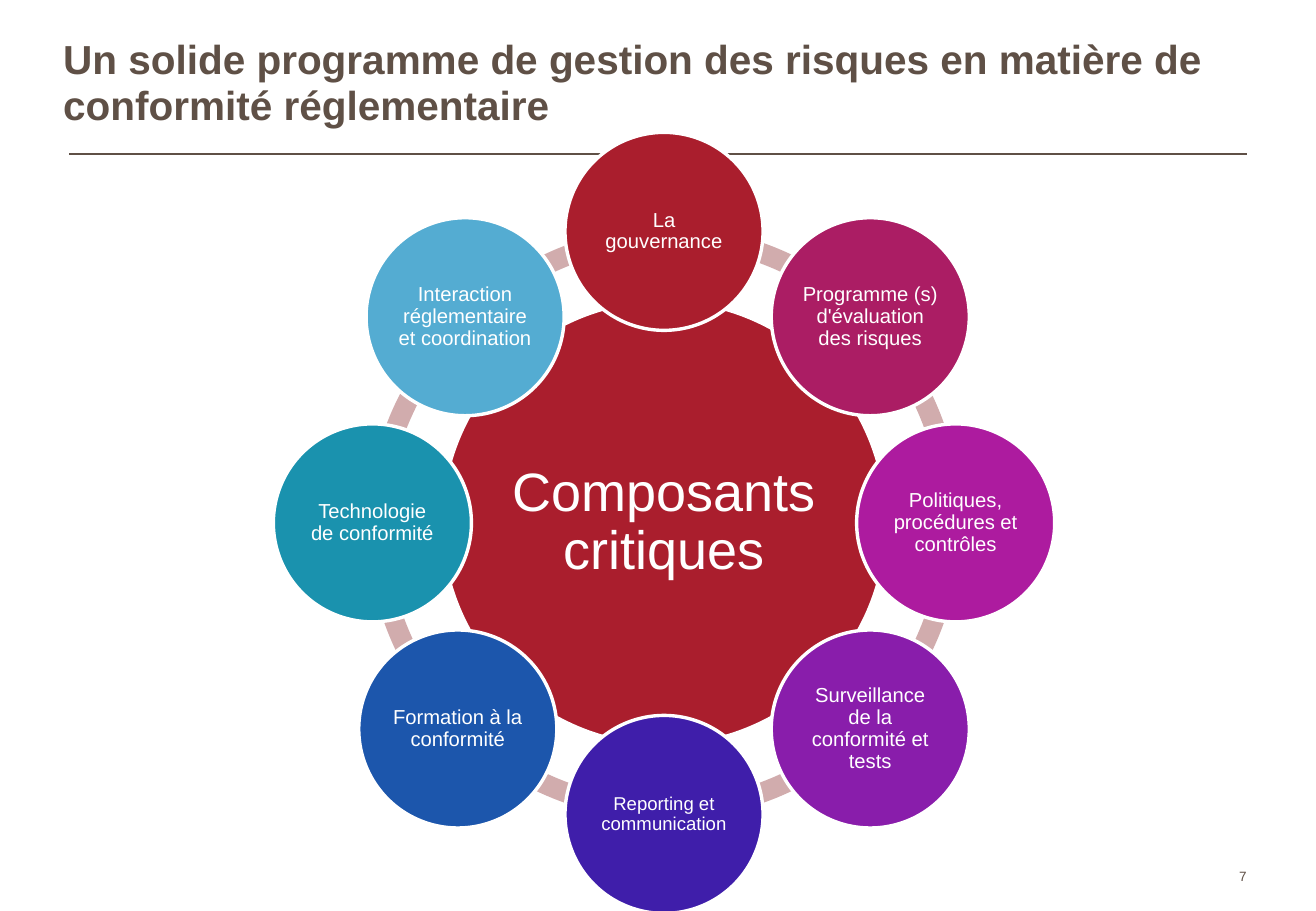
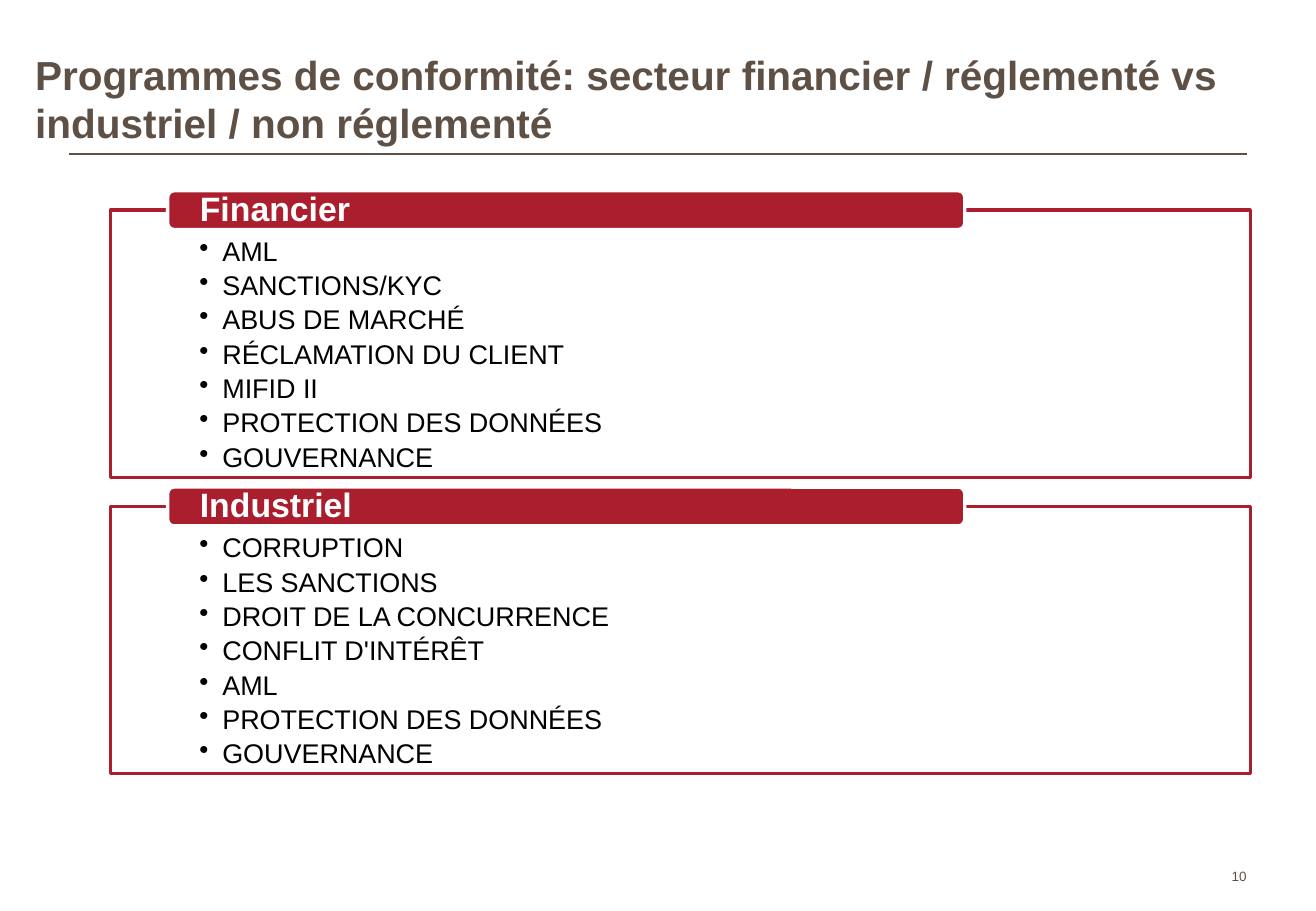
import math

import pptx
import pptx.dml.color
import pptx.enum.shapes
import pptx.enum.text
import pptx.oxml
import pptx.oxml.ns
import pptx.util
from lxml import etree

Inches = pptx.util.Inches
Pt = pptx.util.Pt
SHAPES = pptx.enum.shapes.MSO_SHAPE
ALIGN = pptx.enum.text.PP_ALIGN
ANCHOR = pptx.enum.text.MSO_ANCHOR

FONT = "Arial"
BROWN = "5F5046"
RED = "AA1E2D"
WHITE = "FFFFFF"
BLACK = "000000"
PALE_RED = "D1ACAD"

CENTER_X, CENTER_Y = 5.465, 4.305
ORBIT, NODE_SIZE, HUB_SIZE, RING_SIZE = 2.4, 1.63, 3.66, 4.89
ARC_STEP, ARC_TOP, FULL_TURN, RING_THICKNESS = 27, 162, 216, 0.034

NODES = [
    ("La gouvernance", RED, 12, 0),
    ("Programme (s) d'évaluation des risques", "AB1D64", 12, 0),
    ("Politiques, procédures et contrôles", "AD1B9F", 12, 0),
    ("Surveillance de la conformité et tests", "891DAB", 12, 0),
    ("Reporting et communication", "3F1EAA", 11, 0),
    ("Formation à la conformité", "1C56AC", 12, 0),
    ("Technologie de conformité", "1A92AE", 12, 0),
    ("Interaction réglementaire et coordination", "54ACD2", 12, 0.06),
]
SHIFTED_ARCS = {
    6: (0, 0.06, 108.82, 136.18),
    7: (0.06, 0, 134.99, 161.15),
}
SECTORS = [
    ("Financier", ["AML", "SANCTIONS/KYC", "ABUS DE MARCHÉ", "RÉCLAMATION DU CLIENT",
                   "MIFID II", "PROTECTION DES DONNÉES", "GOUVERNANCE"]),
    ("Industriel", ["CORRUPTION", "LES SANCTIONS", "DROIT DE LA CONCURRENCE",
                    "CONFLIT D'INTÉRÊT", "AML", "PROTECTION DES DONNÉES", "GOUVERNANCE"]),
]


def color(value):
    return pptx.dml.color.RGBColor.from_string(value)


def add_bullet(paragraph, indent):
    properties = paragraph._p.get_or_add_pPr()
    properties.set("marL", str(Inches(indent)))
    properties.set("indent", str(-Inches(indent)))
    bullet = etree.SubElement(properties, pptx.oxml.ns.qn("a:buChar"))
    bullet.set("char", "•")


def write_text(shape, lines, size=12, fill=WHITE, bold=False, align=ALIGN.LEFT,
               anchor=ANCHOR.MIDDLE, insets=(0, 0, 0, 0), spacing=0.9, after=0, bullet=None):
    frame = shape.text_frame
    frame.word_wrap = True
    frame.vertical_anchor = anchor
    frame.margin_left, frame.margin_top, frame.margin_right, frame.margin_bottom = map(Inches, insets)
    for index, line in enumerate(lines):
        paragraph = frame.add_paragraph() if index else frame.paragraphs[0]
        if bullet:
            add_bullet(paragraph, bullet)
        paragraph.alignment = align
        paragraph.line_spacing = spacing
        paragraph.space_after = Pt(after)
        run = paragraph.add_run()
        run.text = line
        run.font.name = FONT
        run.font.size = Pt(size)
        run.font.bold = bold
        run.font.color.rgb = color(fill)


def add_text(slide, box, text, **text_format):
    write_text(slide.shapes.add_textbox(*map(Inches, box)), [text], **text_format)


def add_shape(slide, kind, box, fill, line=None):
    shape = slide.shapes.add_shape(kind, *map(Inches, box))
    shape.shadow.inherit = False
    shape.fill.solid()
    shape.fill.fore_color.rgb = color(fill)
    if line:
        shape.line.color.rgb = color(line)
        shape.line.width = Pt(2)
    else:
        shape.line.fill.background()
    return shape


def add_circle(slide, x, y, diameter, fill, text, size, inset):
    box = (x - diameter / 2, y - diameter / 2, diameter, diameter)
    circle = add_shape(slide, SHAPES.OVAL, box, fill, WHITE)
    write_text(circle, [text], size=size, align=ALIGN.CENTER, insets=(inset,) * 4)


def add_base_slide(presentation, title, title_box, number, **title_format):
    slide = presentation.slides.add_slide(presentation.slide_layouts[6])
    rule = slide.shapes.add_connector(pptx.enum.shapes.MSO_CONNECTOR.STRAIGHT,
                                      *map(Inches, (0.57, 1.27, 10.26, 1.27)))
    rule.line.color.rgb = color(BROWN)
    rule.line.width = Pt(1)
    etree.SubElement(rule._element.spPr, pptx.oxml.ns.qn("a:effectLst"))
    add_text(slide, title_box, title, size=24, fill=BROWN, bold=True, **title_format)
    add_text(slide, (9.79, 7.1, 0.47, 0.18), number, size=8, fill=BROWN,
             align=ALIGN.RIGHT, anchor=ANCHOR.BOTTOM, spacing=1)
    return slide


def add_ring(slide):
    for index in range(len(NODES)):
        start = (ARC_TOP + index * ARC_STEP) % FULL_TURN
        regular = (0, 0, start, (start + ARC_STEP) % FULL_TURN)
        shift_x, shift_y, start, end = SHIFTED_ARCS.get(index, regular)
        box = (CENTER_X - RING_SIZE / 2 + shift_x, CENTER_Y - RING_SIZE / 2 + shift_y,
               RING_SIZE, RING_SIZE)
        arc = add_shape(slide, SHAPES.BLOCK_ARC, box, PALE_RED)
        for position, value in enumerate((start, end, RING_THICKNESS)):
            arc.adjustments[position] = value


def add_components_wheel(slide):
    add_ring(slide)
    add_circle(slide, CENTER_X, CENTER_Y, HUB_SIZE, RED, "Composants critiques", 32, 0.04)
    for index, (text, fill, size, shift) in enumerate(NODES):
        angle = math.tau * index / len(NODES)
        x = CENTER_X + ORBIT * math.sin(angle) + shift
        y = CENTER_Y - ORBIT * math.cos(angle)
        add_circle(slide, x, y, NODE_SIZE, fill, text, size, 0.02)


def add_sector(slide, top, name, topics):
    panel = add_shape(slide, SHAPES.RECTANGLE, (0.91, top, 9.38, 2.2), WHITE, RED)
    write_text(panel, topics, size=16, fill=BLACK, anchor=ANCHOR.TOP,
               insets=(0.73, 0.23, 0.73, 0.12), after=3.1, bullet=0.19)
    header = add_shape(slide, SHAPES.ROUNDED_RECTANGLE, (1.38, top - 0.16, 6.56, 0.32), RED, WHITE)
    write_text(header, [name], size=20, bold=True, insets=(0.25, 0, 0.25, 0))


def main():
    presentation = pptx.Presentation()
    presentation.slide_width = Inches(10.83)
    presentation.slide_height = Inches(7.5)

    wheel_slide = add_base_slide(
        presentation,
        "Un solide programme de gestion des risques en matière de conformité réglementaire",
        (0.52, 0.21, 9.74, 0.86), "7", anchor=ANCHOR.BOTTOM, spacing=0.95)
    add_components_wheel(wheel_slide)

    sector_slide = add_base_slide(
        presentation,
        "Programmes de conformité: secteur financier / réglementé vs industriel / non réglementé",
        (0.29, 0.41, 10.44, 0.81), "10", anchor=ANCHOR.TOP, spacing=1)
    for index, (name, topics) in enumerate(SECTORS):
        add_sector(sector_slide, 1.73 + 2.44 * index, name, topics)

    presentation.save("out.pptx")


if __name__ == "__main__":
    main()
